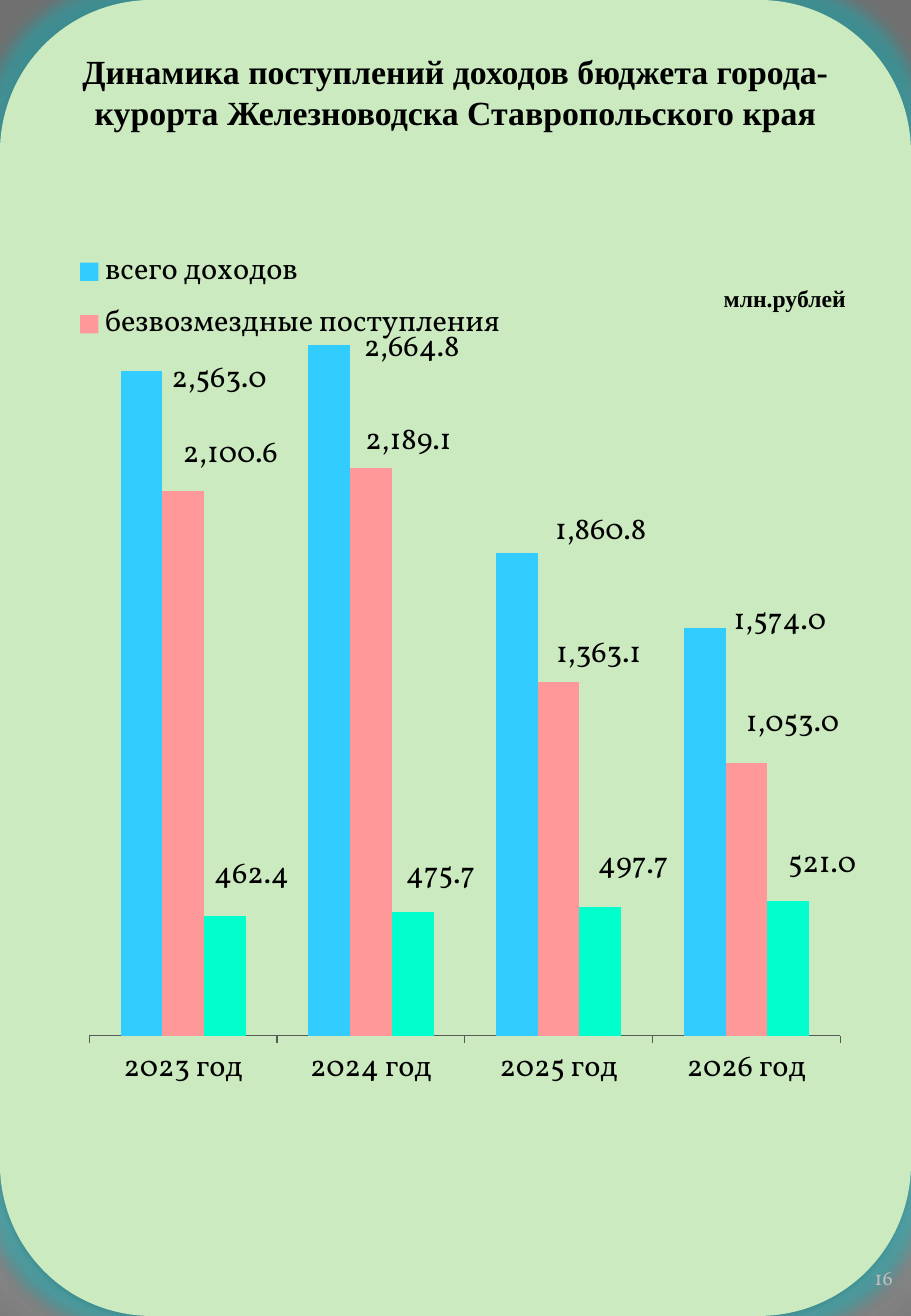
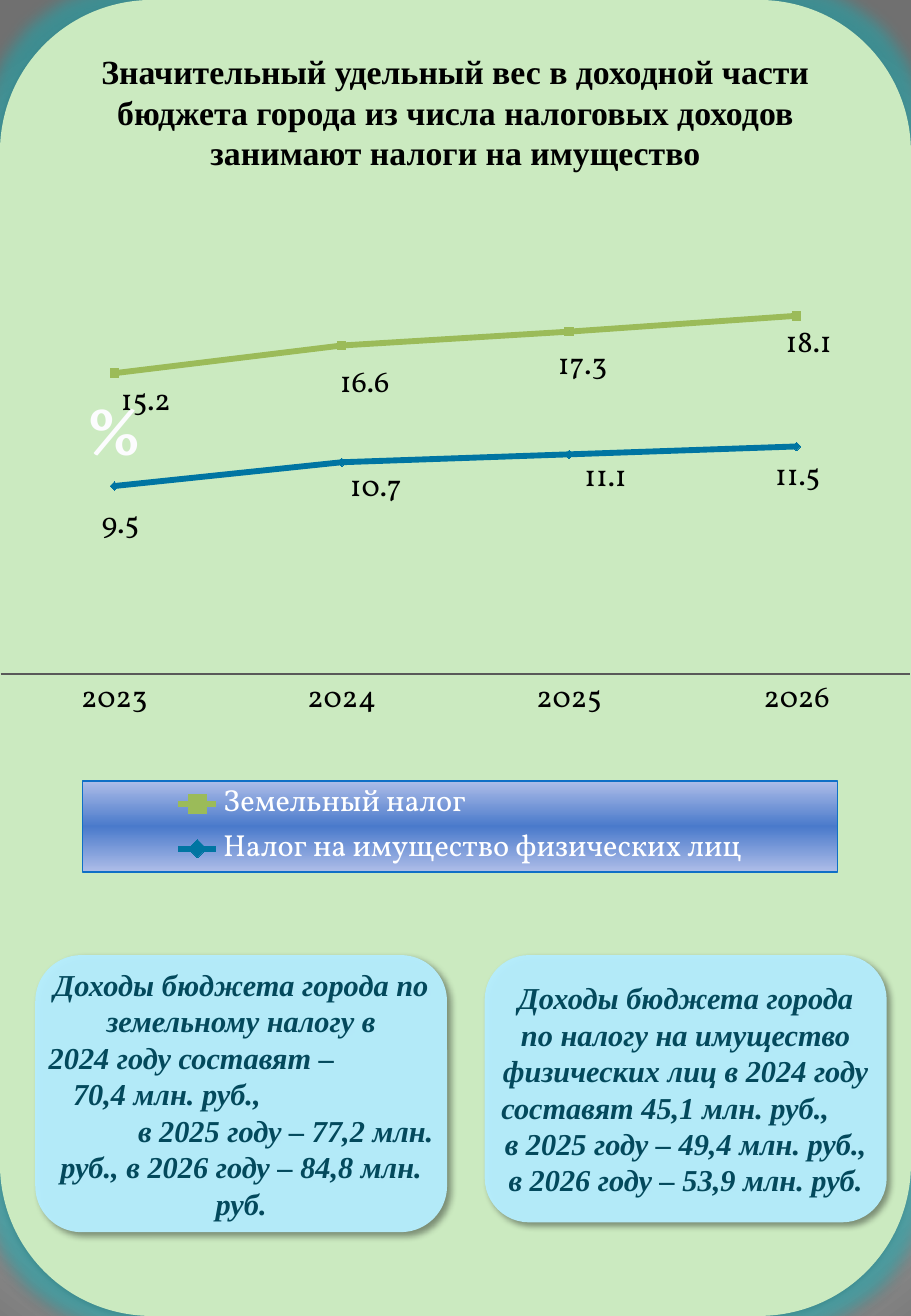
"""Build two budget slides: revenue dynamics and property taxes."""
from lxml import etree
from pptx import Presentation
from pptx.chart.data import CategoryChartData
from pptx.dml.color import RGBColor
from pptx.enum import chart as ch, shapes, text
from pptx.oxml import parse_xml
from pptx.oxml.ns import nsdecls, qn
from pptx.util import Inches, Pt

COLORS = {
    "panel": "CBEAC0", "glow": "0BD0D9", "black": "000000", "number": "BFBFBF",
    "percent": "FCFCFE", "card": "B5EDFD", "card_text": "03495C", "white": "FFFFFF",
    "backdrop": "707070", "axis": "595959", "total": "33CCFF", "grants": "FF9999",
    "own": "00FFCC", "land": "9BBB59", "property": "0075A2",
    "legend_edge": "AEBDE8", "legend_mid": "4A7ACB", "legend_line": "0F6FC6",
}
SERIF, BODY = "Times New Roman", "Vollkorn"
WIDTH, HEIGHT = 7.5, 10.83
LEFT, CENTER, RIGHT = text.PP_ALIGN.LEFT, text.PP_ALIGN.CENTER, text.PP_ALIGN.RIGHT

TITLES = [
    "Динамика поступлений доходов бюджета города-курорта Железноводска Ставропольского края",
    "Значительный удельный вес в доходной части бюджета города из числа "
    "налоговых доходов занимают налоги на имущество",
]
REVENUE = {
    "kind": ch.XL_CHART_TYPE.COLUMN_CLUSTERED,
    "box": (0.16, 1.98, 7.19, 7.27),
    "plot": (0.08, 0.02, 0.86, 0.88),
    "legend": (0.06, 0, 0.5, 0.13),
    "legend_side": ch.XL_LEGEND_POSITION.RIGHT,
    "legend_color": "black",
    "label_side": ch.XL_LABEL_POSITION.OUTSIDE_END,
    "tick": ch.XL_TICK_MARK.OUTSIDE,
    "top": 3000,
    "categories": ["2023 год", "2024 год", "2025 год", "2026 год"],
    "series": [
        ("всего доходов", "total", [2563, 2664.8, 1860.8, 1574],
         [(0.64, 0.29), (0.68, 0.25), (0.69, 0.04), (0.62, 0.17)]),
        ("безвозмездные поступления", "grants", [2100.6, 2189.1, 1363.1, 1053],
         [(0.39, -0.08), (0.31, 0), (0.33, -0.01), (0.38, -0.1)]),
        ("", "own", [462.4, 475.7, 497.7, 521],
         [(0.22, -0.11), (0.23, -0.08), (0.27, -0.12), (0.28, -0.08)]),
    ],
}
TAXES = {
    "kind": ch.XL_CHART_TYPE.LINE_MARKERS,
    "box": (0, 2.29, 7.5, 5.17),
    "plot": (0, 0, 1, 0.63),
    "legend": (0.09, 0.8, 0.83, 0.145),
    "legend_side": ch.XL_LEGEND_POSITION.TOP,
    "legend_color": "white",
    "label_side": ch.XL_LABEL_POSITION.BELOW,
    "tick": ch.XL_TICK_MARK.NONE,
    "top": 20,
    "categories": ["2023", "2024", "2025", "2026"],
    "series": [
        ("Земельный налог", "land", [15.2, 16.6, 17.3, 18.1],
         [(0.26, -0.01), (0.19, 0.07), (0.11, 0.04), (0.1, -0.01)]),
        ("Налог на имущество физических лиц", "property", [9.5, 10.7, 11.1, 11.5],
         [(0.05, 0.08), (0.28, -0.03), (0.3, -0.05), (0.01, 0.01)]),
    ],
}
MARKERS = [ch.XL_MARKER_STYLE.SQUARE, ch.XL_MARKER_STYLE.DIAMOND]
CARDS = [
    ((0.29, 7.86, 3.39, 2.28), [
        ("Доходы бюджета города по", CENTER, 0), ("земельному налогу в", CENTER, 0),
        ("2024 году составят –", LEFT, 0), ("70,4 млн. руб.,", LEFT, 0.2),
        ("в 2025 году – 77,2 млн.", RIGHT, 0),
        ("руб., в 2026 году – 84,8 млн.", CENTER, 0), ("руб.", CENTER, 0)]),
    ((3.99, 7.86, 3.31, 2.2), [
        ("Доходы бюджета города", CENTER, 0), ("по налогу на имущество", CENTER, 0),
        ("физических лиц в 2024 году", CENTER, 0), ("составят 45,1 млн. руб.,", LEFT, 0.03),
        ("в 2025 году – 49,4 млн. руб.,", CENTER, 0),
        ("в 2026 году – 53,9 млн. руб.", CENTER, 0)]),
]


def rgb(name):
    return RGBColor.from_string(COLORS[name])


def inches(box):
    return [Inches(side) for side in box]


def gradient(stops, direction):
    marks = "".join(f'<a:gs pos="{at * 1000}"><a:srgbClr val="{COLORS[name]}"/></a:gs>'
                    for at, name in stops)
    return f'<a:gradFill {nsdecls("a")}><a:gsLst>{marks}</a:gsLst>{direction}</a:gradFill>'


def add_run(paragraph, words, size, font, color, bold=False, italic=False):
    run = paragraph.add_run()
    run.text = words
    run.font.size, run.font.name = Pt(size), font
    run.font.bold, run.font.italic = bold, italic
    run.font.color.rgb = rgb(color)


def add_note(slide, box, words, size, font, color, bold=False, align=LEFT, inset=True):
    frame = slide.shapes.add_textbox(*inches(box)).text_frame
    frame.word_wrap = True
    if not inset:
        frame.margin_left = frame.margin_right = frame.margin_top = frame.margin_bottom = 0
        frame.vertical_anchor = text.MSO_ANCHOR.BOTTOM
    frame.paragraphs[0].alignment = align
    add_run(frame.paragraphs[0], words, size, font, color, bold)


def add_rounded(slide, box, color, shadow, glow=""):
    alpha, blur, distance, angle = shadow
    rounded = slide.shapes.add_shape(shapes.MSO_SHAPE.ROUNDED_RECTANGLE, *inches(box))
    rounded.fill.solid()
    rounded.fill.fore_color.rgb = rgb(color)
    rounded.line.fill.background()
    rounded.element.spPr.append(parse_xml(
        f'<a:effectLst {nsdecls("a")}>{glow}<a:outerShdw blurRad="{Pt(blur)}" '
        f'dist="{Pt(distance)}" dir="{angle * 60000}" rotWithShape="0">'
        f'<a:srgbClr val="{COLORS["black"]}"><a:alpha val="{alpha * 1000}"/></a:srgbClr>'
        '</a:outerShdw></a:effectLst>'))
    return rounded


def style_master(master, slide):
    master.background.fill.solid()
    solid = master.element.find(".//" + qn("p:bgPr")).find(qn("a:solidFill"))
    solid.getparent().replace(solid, parse_xml(gradient(
        [(0, "white"), (25, "white"), (100, "backdrop")],
        '<a:path path="circle"><a:fillToRect l="10000" t="110000" r="10000" b="100000"/></a:path>')))
    glow = (f'<a:glow rad="{Pt(18)}"><a:srgbClr val="{COLORS["glow"]}">'
            '<a:alpha val="40000"/></a:srgbClr></a:glow>')
    panel = add_rounded(slide, (0, 0, WIDTH, HEIGHT), "panel", (32, 3.5, 2.2, 90), glow)
    master.shapes.element.insert(2, panel.element)


def add_title(slide, words):
    title = slide.shapes.title
    title.left, title.top, title.width, title.height = inches((0.37, 0.37, 6.76, 1.2))
    frame = title.text_frame
    frame.word_wrap, frame.auto_size = True, text.MSO_AUTO_SIZE.NONE
    frame.vertical_anchor = text.MSO_ANCHOR.TOP
    frame.paragraphs[0].alignment = CENTER
    add_run(frame.paragraphs[0], words, 20, SERIF, "black", True)


def layout_xml(values, modes):
    parts = "".join(f'<c:{tag} val="{value}"/>' for tag, value in modes)
    parts += "".join(f'<c:{tag} val="{value:.4f}"/>' for tag, value in zip("xywh", values))
    return parse_xml(f'<c:layout {nsdecls("c")}><c:manualLayout>{parts}</c:manualLayout></c:layout>')


def add_budget_chart(slide, design):
    data = CategoryChartData(number_format="#,##0.0")
    data.categories = design["categories"]
    for name, _, values, _ in design["series"]:
        data.add_series(name, values)
    chart = slide.shapes.add_chart(design["kind"], *inches(design["box"]), data).chart
    chart.has_title = False
    chart.font.size, chart.font.name = Pt(18), BODY
    chart.font.color.rgb = rgb("black")
    plot = chart.plots[0]
    plot.vary_by_categories = False
    value_axis, year_axis = chart.value_axis, chart.category_axis
    value_axis.minimum_scale, value_axis.maximum_scale = 0, design["top"]
    value_axis.has_major_gridlines = False
    value_axis.visible = False
    year_axis.major_tick_mark = design["tick"]
    year_axis.format.line.color.rgb = rgb("axis")
    for series, (_, color, values, _) in zip(plot.series, design["series"]):
        for index in range(len(values)):
            series.points[index].data_label.position = design["label_side"]
        if design["kind"] == ch.XL_CHART_TYPE.COLUMN_CLUSTERED:
            series.format.fill.solid()
            series.format.fill.fore_color.rgb = rgb(color)
    offsets = [offset for row in design["series"] for offset in row[3]]
    for label, (dx, dy) in zip(chart.element.xpath(".//c:dLbl"), offsets):
        label.insert(1, layout_xml((dx / design["box"][2], dy / design["box"][3]), []))
    for leader in chart.element.xpath(".//c:showLeaderLines"):
        leader.set("val", "0")

    edges = [("xMode", "edge"), ("yMode", "edge")]
    area = chart.element.find(".//" + qn("c:plotArea"))
    for old in area.findall(qn("c:layout")):
        area.remove(old)
    area.insert(0, layout_xml(design["plot"], [("layoutTarget", "inner")] + edges))
    chart.has_legend = True
    legend = chart.legend
    legend.position = design["legend_side"]
    legend.include_in_layout = False
    legend.font.size, legend.font.name = Pt(18), BODY
    legend.font.color.rgb = rgb(design["legend_color"])
    node = chart.element.find(".//" + qn("c:legend"))
    for old in node.findall(qn("c:layout")):
        node.remove(old)
    node.find(qn("c:legendPos")).addnext(layout_xml(design["legend"], edges))
    return chart, node


def add_revenue_slide(slide):
    add_note(slide, (6.92, 10.03, 0.43, 0.58), "16", 12, BODY, "number", align=RIGHT, inset=False)
    add_note(slide, (5.86, 2.29, 1.29, 0.34), "млн.рублей", 14, SERIF, "black", True)
    chart, legend = add_budget_chart(slide, REVENUE)
    chart.plots[0].gap_width, chart.plots[0].overlap = 150, 0
    legend.find(qn("c:legendPos")).addnext(parse_xml(
        f'<c:legendEntry {nsdecls("c")}><c:idx val="2"/><c:delete val="1"/></c:legendEntry>'))


def add_card(slide, box, lines):
    card = add_rounded(slide, box, "card", (40, 4, 3, 45))
    fill = card.element.spPr.find(qn("a:solidFill"))[0]
    etree.SubElement(fill, qn("a:alpha")).set("val", "97000")
    frame = card.text_frame
    frame.word_wrap = True
    frame.margin_left = frame.margin_right = 0
    frame.vertical_anchor = text.MSO_ANCHOR.MIDDLE
    for index, (words, align, indent) in enumerate(lines):
        paragraph = frame.add_paragraph() if index else frame.paragraphs[0]
        paragraph.alignment, paragraph.line_spacing = align, Pt(21.6)
        if indent:
            paragraph._p.get_or_add_pPr().set("marL", str(Inches(indent)))
        add_run(paragraph, words, 18, SERIF, "card_text", True, True)


def add_taxes_slide(slide):
    add_note(slide, (0.6, 3.14, 0.49, 0.77), "%", 40, BODY, "percent", True, CENTER)
    for box, lines in CARDS:
        add_card(slide, box, lines)
    chart, legend = add_budget_chart(slide, TAXES)
    for series, (_, color, _, _), marker in zip(chart.plots[0].series, TAXES["series"], MARKERS):
        series.smooth = False
        series.format.line.width = Pt(3.5)
        series.format.line.color.rgb = rgb(color)
        series.marker.style, series.marker.size = marker, 5
        series.marker.format.fill.solid()
        series.marker.format.fill.fore_color.rgb = rgb(color)
        series.marker.format.line.fill.background()
    fill = gradient([(0, "legend_edge"), (50, "legend_mid"), (100, "legend_edge")],
                    '<a:lin ang="5400000" scaled="0"/>')
    legend.find(qn("c:txPr")).addprevious(parse_xml(
        f'<c:spPr {nsdecls("c", "a")}>{fill}<a:ln w="{Pt(1)}"><a:solidFill>'
        f'<a:srgbClr val="{COLORS["legend_line"]}"/></a:solidFill></a:ln></c:spPr>'))


def main():
    deck = Presentation()
    deck.slide_width, deck.slide_height = Inches(WIDTH), Inches(HEIGHT)
    for index, (words, fill_slide) in enumerate(zip(TITLES, (add_revenue_slide, add_taxes_slide))):
        slide = deck.slides.add_slide(deck.slide_layouts[5])
        if index == 0:
            style_master(deck.slide_master, slide)
        add_title(slide, words)
        fill_slide(slide)
    deck.save("out.pptx")


if __name__ == "__main__":
    main()
